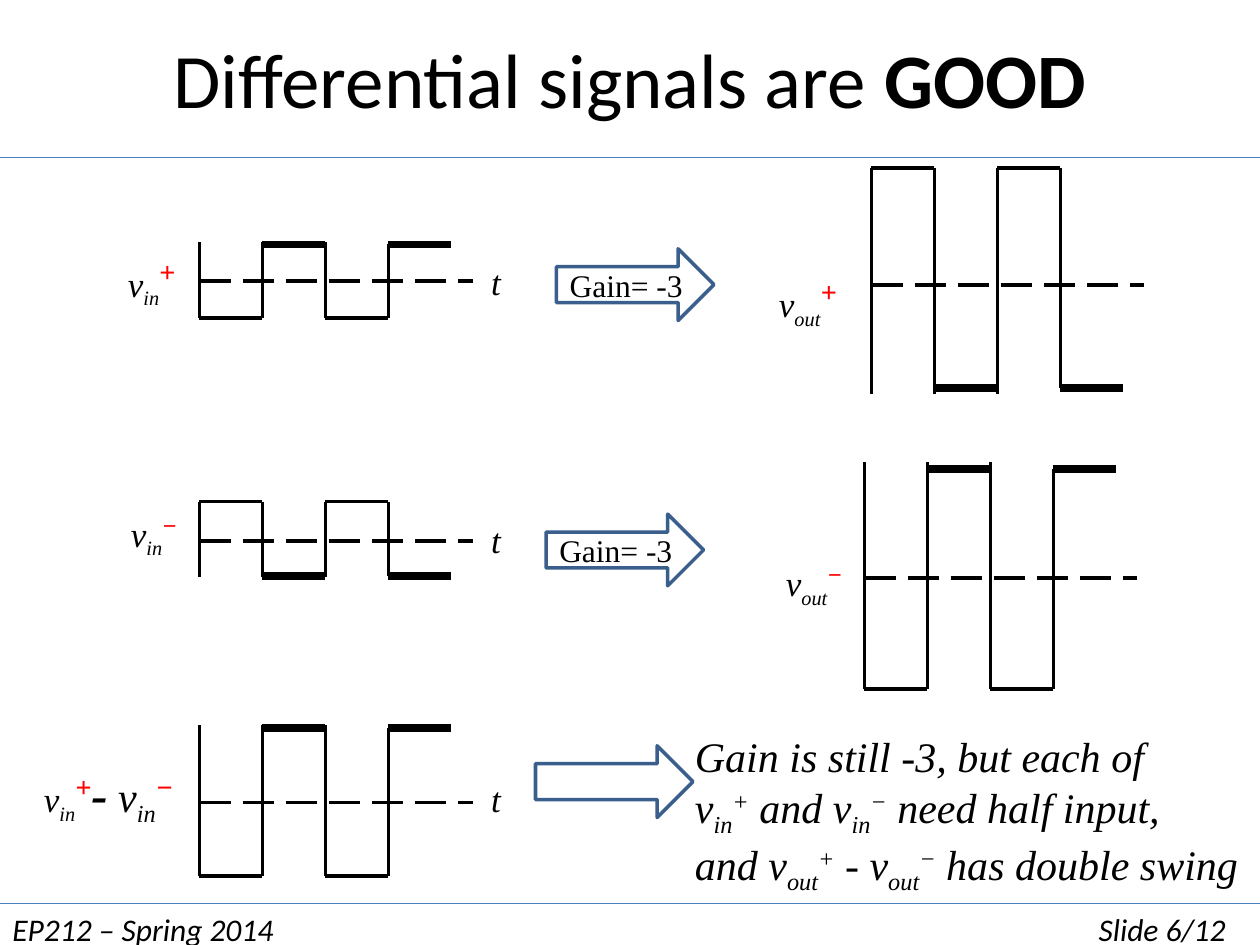
import pptx
import pptx.dml.color
import pptx.enum.dml
import pptx.enum.shapes
import pptx.enum.text
import pptx.oxml.ns
import pptx.util
from lxml import etree

Pt = pptx.util.Pt
qn = pptx.oxml.ns.qn
ALIGN = pptx.enum.text.PP_ALIGN
MIDDLE = pptx.enum.text.MSO_ANCHOR.MIDDLE
SERIF = "Times New Roman"
BLACK, RED, BLUE, NAVY, WHITE = "000000", "FF0000", "4B7EBC", "3A5F8C", "FFFFFF"
HALF = 36  # half a period of each wave
GAIN = "Gain= -3"


def color(value):
    return pptx.dml.color.RGBColor.from_string(value)


def style(run, size=20, font=SERIF, fill=BLACK, bold=False, italic=False, base=0):
    """Format a run; base is the super- or subscript shift in percent."""
    run.font.size = Pt(size)
    run.font.name = font
    run.font.bold = bold
    run.font.italic = italic
    run.font.color.rgb = color(fill)
    if base:
        run.font._element.set("baseline", str(base * 1000))


def write(frame, lines, align=None, **form):
    """Fill a frame with a string, or with lines made of (text, format) runs."""
    if isinstance(lines, str):
        lines = [[(lines, {})]]
    for i, line in enumerate(lines):
        para = frame.paragraphs[0] if i == 0 else frame.add_paragraph()
        para.alignment = align
        for words, extra in line:
            run = para.add_run()
            run.text = words
            style(run, **{**form, **extra})


def text(slide, lines, x, y, w, h, wrap=False, anchor=None, **form):
    frame = slide.shapes.add_textbox(Pt(x), Pt(y), Pt(w), Pt(h)).text_frame
    frame.word_wrap = wrap
    frame.vertical_anchor = anchor
    write(frame, lines, **form)
    return frame


def term(sub, sign, **mark):
    """Runs for a voltage with its subscript and sign."""
    return [("v", {}), (sub, {"base": -25}), (sign, {"base": 30, **mark})]


def line(shapes, x1, y1, x2, y2, width=2.25, fill=BLACK, dash=None):
    item = shapes.add_connector(pptx.enum.shapes.MSO_CONNECTOR.STRAIGHT,
                                Pt(x1), Pt(y1), Pt(x2), Pt(y2))
    item.line.width = Pt(width)
    item.line.color.rgb = color(fill)
    if dash:
        item.line.dash_style = dash
    etree.SubElement(item._element.spPr, qn("a:effectLst"))


def wave(slide, x, thin, far, thick, axis):
    """Square wave: thin and thick are its levels, far ends the verticals."""
    shapes = slide.shapes.add_group_shape().shapes
    line(shapes, x, axis, x + 156, axis,
         dash=pptx.enum.dml.MSO_LINE.LONG_DASH)
    for i in range(4):
        left = x + i * HALF
        level, width = (thick, 4.5) if i % 2 else (thin, 2.25)
        line(shapes, left, level, left + HALF, level, width)
        line(shapes, left, thin, left, thick if i == 3 else far)


def arrow(slide, x, y, label=""):
    item = slide.shapes.add_shape(pptx.enum.shapes.MSO_SHAPE.RIGHT_ARROW,
                                  Pt(x), Pt(y), Pt(90), Pt(41))
    item.shadow.inherit = False
    item.fill.solid()
    item.fill.fore_color.rgb = color(WHITE)
    item.line.color.rgb = color(NAVY)
    item.line.width = Pt(2)
    if label:
        item.text_frame.vertical_anchor = MIDDLE
        write(item.text_frame, label, align=ALIGN.CENTER, size=18)


def footer(slide):
    line(slide.shapes, 0, 516.2, 720, 516.2, 0.75, BLUE)
    frame = text(slide, "EP212 – Spring 2014\tSlide 6/12", 0, 516.2, 728, 29,
                 wrap=True, size=18, font="Calibri", italic=True)
    props = frame.paragraphs[0]._p.get_or_add_pPr()
    tabs = etree.SubElement(props, qn("a:tabLst"))
    etree.SubElement(tabs, qn("a:tab"), pos=str(Pt(693.4)), algn="r")


def main():
    deck = pptx.Presentation()
    deck.slide_width, deck.slide_height = Pt(720), Pt(540)
    slide = deck.slides.add_slide(deck.slide_layouts[6])

    footer(slide)
    text(slide, [[("Differential signals are ", {}), ("GOOD", {"bold": True})]],
         0, -13.7, 720, 116, wrap=True, anchor=MIDDLE, align=ALIGN.CENTER,
         size=44, font="Calibri")
    line(slide.shapes, 0, 90, 720, 90, 0.75, BLUE)

    for x, thin, far, thick, axis in [
        (114, 181.5, 138.2, 139.7, 160.6),
        (114, 286.6, 329.8, 329, 308.9),
        (114, 500.4, 414, 416.2, 458.6),
        (498, 95.8, 225.4, 221.8, 162.7),
        (494, 393.8, 264.2, 267.8, 330.5),
    ]:
        wave(slide, x, thin, far, thick, axis)

    for y in (145.4, 293, 440.6):
        text(slide, "t", 273.6, y, 20, 31.5, italic=True)

    plus = {"size": 28, "fill": RED, "bold": True}
    minus = {**plus, "size": 24}
    for sub, sign, mark, x, y, w in [
        ("in", "+", plus, 66, 138.2, 45),
        ("in", "−", minus, 67.7, 285.1, 44),
        ("out", "+", plus, 438, 149.8, 51),
        ("out", "−", minus, 442, 313.2, 50),
    ]:
        text(slide, [term(sub, sign, **mark)], x, y, w, 31.5, italic=True)

    large = {"size": 24}
    swing = term("in", "+", **plus) + [
        ("-", {"size": 28, "bold": True}), (" v", large),
        ("in", {"base": -25, **large}), ("−", {"base": 30, **plus})]
    text(slide, [swing], 18, 432.7, 95, 41, italic=True)

    arrow(slide, 318, 142.2, GAIN)
    arrow(slide, 312, 293.8, GAIN)
    arrow(slide, 306, 426.2)

    text(slide, [
        [("Gain is still -3, but each of", {})],
        [*term("in", "+"), (" and ", {}), *term("in", "−"),
         (" need half input,", {})],
        [("and ", {}), *term("out", "+"), (" - ", {}), *term("out", "−"),
         (" has double swing", {})],
    ], 390, 414, 342, 94.3, size=24, italic=True)

    deck.save("out.pptx")


if __name__ == "__main__":
    main()
